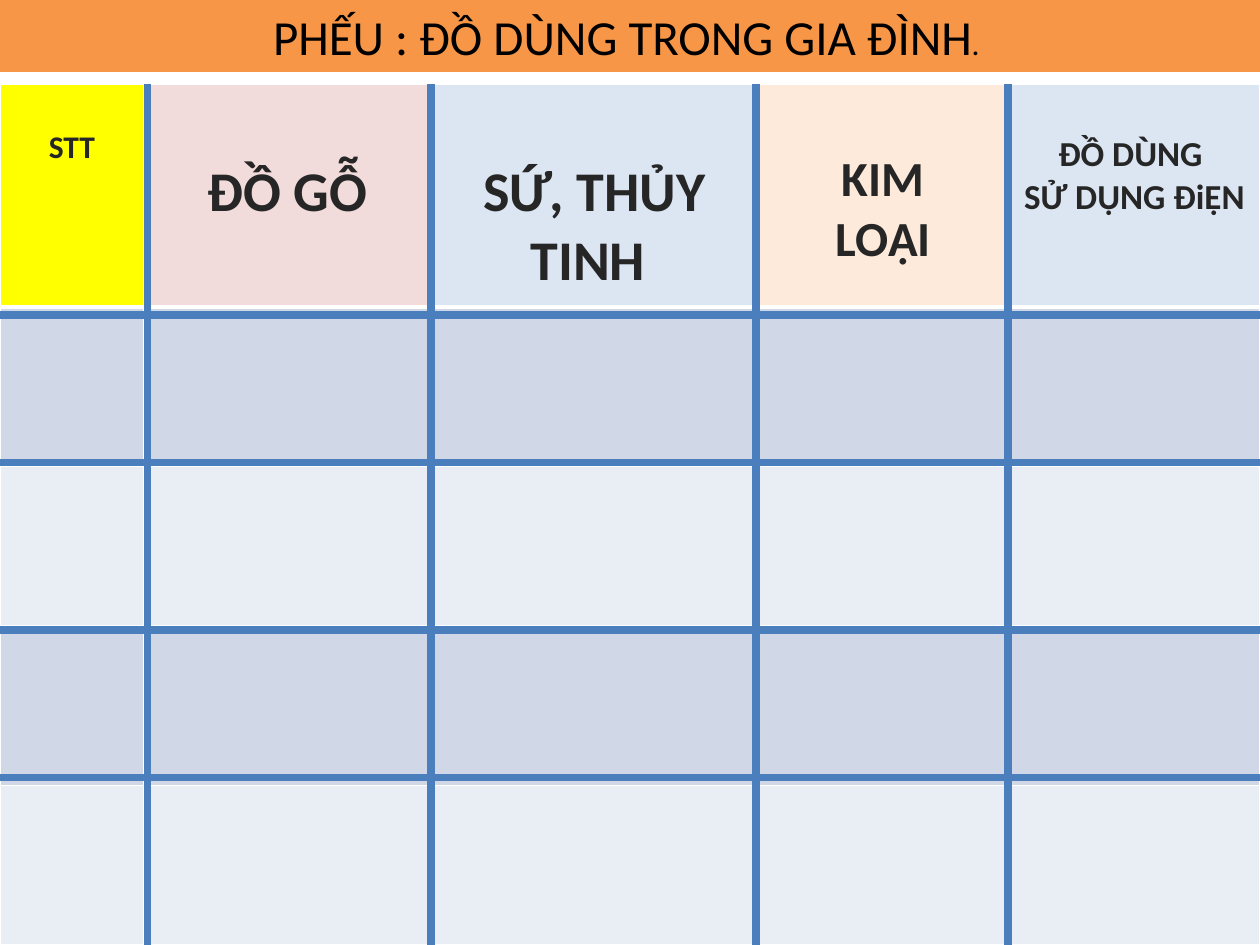
from lxml.etree import SubElement
from pptx import Presentation
from pptx.dml.color import RGBColor as Rgb
from pptx.enum.shapes import MSO_CONNECTOR as Connector, MSO_SHAPE as Shape
from pptx.enum.text import MSO_ANCHOR as Anchor, MSO_AUTO_SIZE as AutoSize, PP_ALIGN as Align
from pptx.oxml.ns import qn
from pptx.util import Cm, Pt

# Content: heading lines, type size, fill and column width (cm)
TITLE = [("PHẾU : ĐỒ DÙNG TRONG GIA ĐÌNH", 28), (". ", 18)]
HEADINGS = [
    (["STT"], 18, "FFFF00", 2.9),
    (["ĐỒ GỖ"], 32, "F2DCDB", 5.79),
    ([" SỨ, THỦY ", "TINH "], 32, "DCE6F2", 6.58),
    (["KIM", " LOẠI "], 28, "FDEADA", 5.07),
    (["ĐỒ DÙNG ", "SỬ DỤNG ĐiỆN"], 20, "DCE6F2", 5.06),
]
EMPTY_ROWS = 4

THEME = {
    "font": "Calibri", "title_fill": "F79646", "title_text": "000000",
    "heading_text": "262626", "bands": ("D0D8E8", "E9EDF4"),
    "border": "FFFFFF", "border_width": 1, "header_rule": 3,
    "line": "4B7EBC", "line_width": 4.25,
}

# Layout in cm
WIDTH, HEIGHT = 25.4, 19.05
TITLE_HEIGHT, TABLE_TOP, HEADER_HEIGHT = 1.45, 1.69, 4.5
COLUMN_LINES = (2.97, 8.69, 15.24, 20.32)
ROW_LINES = (6.35, 9.32, 12.7, 15.67)
LINE_SPACING = 1.22
CELL_MARGIN = Cm(0.13)


def add_text(paragraph, text, size, color, bold=False):
    run = paragraph.add_run()
    run.text = text
    formats = {"name": THEME["font"], "size": Pt(size), "bold": bold}
    for key, value in formats.items():
        setattr(run.font, key, value)
    run.font.color.rgb = Rgb.from_string(color)
    paragraph.alignment = Align.CENTER


def style_cell(cell, fill, bottom_width):
    properties = cell._tc.get_or_add_tcPr()
    for side in "LRTB":
        width = bottom_width if side == "B" else THEME["border_width"]
        border = SubElement(properties, qn(f"a:ln{side}"), w=str(Pt(width)))
        solid = SubElement(border, qn("a:solidFill"))
        SubElement(solid, qn("a:srgbClr"), val=THEME["border"])
    cell.fill.solid()
    cell.fill.fore_color.rgb = Rgb.from_string(fill)


def add_table(slide):
    table = slide.shapes.add_table(
        EMPTY_ROWS + 1, len(HEADINGS), 0, Cm(TABLE_TOP),
        Cm(WIDTH), Cm(HEIGHT - TABLE_TOP)).table
    for key, value in {"first_row": False, "horz_banding": False}.items():
        setattr(table, key, value)
    row_height = (HEIGHT - TABLE_TOP - HEADER_HEIGHT) / EMPTY_ROWS
    for index, row in enumerate(table.rows):
        row.height = Cm(row_height if index else HEADER_HEIGHT)

    for column, (lines, size, fill, width) in enumerate(HEADINGS):
        table.columns[column].width = Cm(width)
        # Each heading starts one line below the top of its cell
        heading = table.cell(0, column)
        style_cell(heading, fill, THEME["header_rule"])
        heading.margin_top = CELL_MARGIN + Pt(size * LINE_SPACING)
        frame = heading.text_frame
        for index, line in enumerate(lines):
            paragraph = frame.add_paragraph() if index else frame.paragraphs[0]
            add_text(paragraph, line, size, THEME["heading_text"], bold=True)
        for row in range(EMPTY_ROWS):
            style_cell(table.cell(row + 1, column), THEME["bands"][row % 2],
                       THEME["border_width"])


def add_title(slide):
    title = slide.shapes.add_shape(Shape.RECTANGLE, 0, 0, Cm(WIDTH), Cm(TITLE_HEIGHT))
    title.shadow.inherit = False
    title.fill.solid()
    title.fill.fore_color.rgb = Rgb.from_string(THEME["title_fill"])
    title.line.fill.background()
    formats = {"word_wrap": True, "auto_size": AutoSize.SHAPE_TO_FIT_TEXT,
               "vertical_anchor": Anchor.TOP}
    for key, value in formats.items():
        setattr(title.text_frame, key, value)
    for text, size in TITLE:
        add_text(title.text_frame.paragraphs[0], text, size, THEME["title_text"])


def add_line(slide, *ends):
    rule = slide.shapes.add_connector(Connector.STRAIGHT, *map(Cm, ends))
    rule.line.color.rgb = Rgb.from_string(THEME["line"])
    rule.line.width = Pt(THEME["line_width"])
    SubElement(rule._element.spPr, qn("a:effectLst"))


def main():
    deck = Presentation()
    for key, value in {"slide_width": Cm(WIDTH), "slide_height": Cm(HEIGHT)}.items():
        setattr(deck, key, value)
    slide = deck.slides.add_slide(deck.slide_layouts[6])
    add_table(slide)
    add_title(slide)
    # Grid lines over the table
    for x in COLUMN_LINES:
        add_line(slide, x, TABLE_TOP, x, HEIGHT)
    for y in ROW_LINES:
        add_line(slide, 0, y, WIDTH, y)
    deck.save("out.pptx")


if __name__ == "__main__":
    main()
